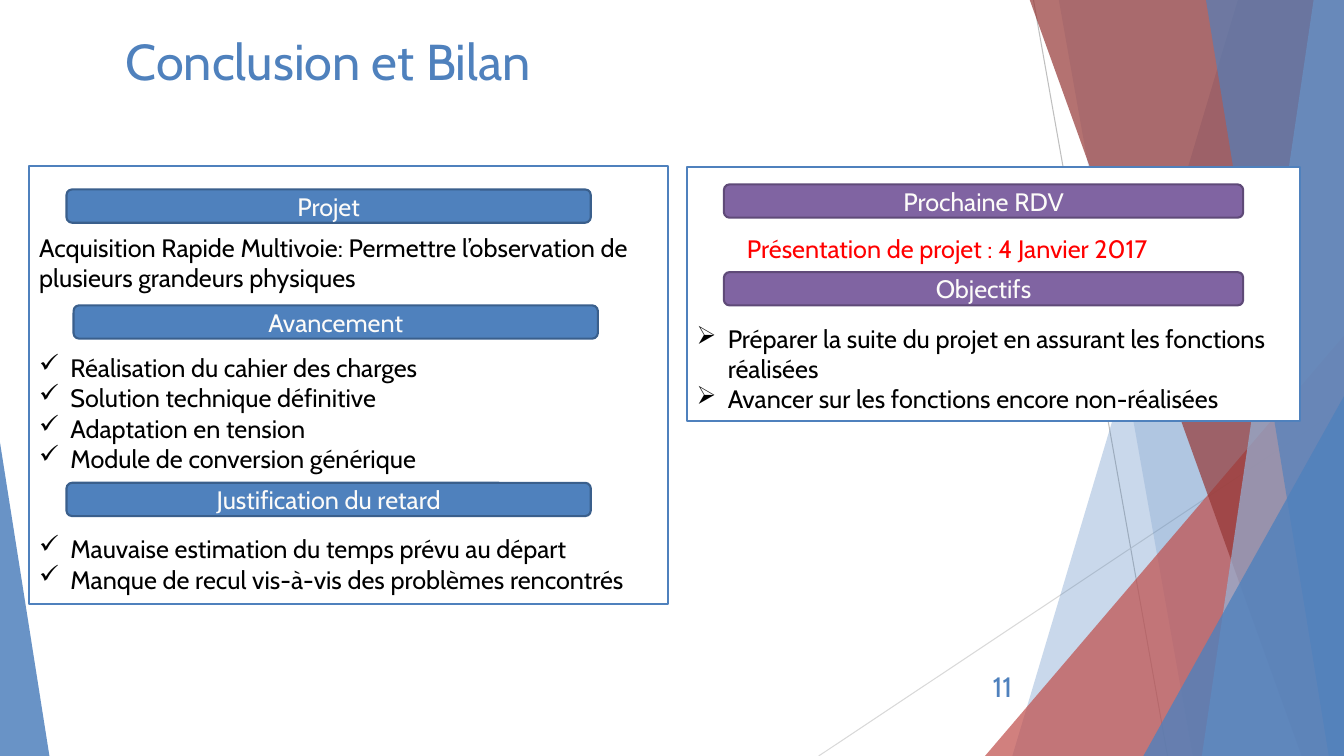
"""Build the project conclusion slide with its two summary panels."""
from dataclasses import dataclass
from typing import Any

from lxml.etree import SubElement
from pptx import Presentation
from pptx.dml.color import RGBColor
from pptx.enum.shapes import MSO_CONNECTOR, MSO_SHAPE
from pptx.enum.text import MSO_ANCHOR, PP_ALIGN
from pptx.oxml.ns import qn
from pptx.shapes.autoshape import Shape
from pptx.slide import Slide
from pptx.util import Inches, Pt

BLUE = RGBColor(0x4F, 0x81, 0xBD)
BLUE_EDGE = RGBColor(0x3A, 0x5F, 0x8C)
LIGHT_BLUE = RGBColor(0x95, 0xB3, 0xD7)
PURPLE = RGBColor(0x80, 0x64, 0xA2)
PURPLE_EDGE = RGBColor(0x5F, 0x4A, 0x78)
BRICK = RGBColor(0xC0, 0x50, 0x4D)
DARK_BRICK = RGBColor(0x95, 0x37, 0x35)
RED = RGBColor(0xFF, 0x00, 0x00)
BLACK = RGBColor(0x00, 0x00, 0x00)
WHITE = RGBColor(0xFF, 0xFF, 0xFF)
CREAM = RGBColor(0xFC, 0xFB, 0xF9)
GREY = RGBColor(0xBF, 0xBF, 0xBF)
LIGHT_GREY = RGBColor(0xD9, 0xD9, 0xD9)

WIDTH, HEIGHT = 13.33, 7.5
BAND_TOP = -0.01
HANGING = 0.31
HEADING_GAP = 43


@dataclass
class Ray:
    start: tuple[float, float]
    end: tuple[float, float]
    color: RGBColor


@dataclass
class Band:
    top_left: float
    bottom_left: float
    color: RGBColor
    opacity: int


@dataclass
class Wedge:
    left: float
    top: float
    width: float
    apex: float
    color: RGBColor
    opacity: int


@dataclass
class Item:
    text: str
    bullet: str = ""
    indent: float = 0
    color: RGBColor = BLACK
    space_before: float = 0


@dataclass
class Panel:
    left: float
    top: float
    width: float
    height: float
    items: list[Item]


@dataclass
class Heading:
    text: str
    left: float
    top: float
    width: float
    fill: RGBColor
    edge: RGBColor


@dataclass
class Label:
    text: str
    left: float
    top: float
    width: float
    height: float
    size: float
    align: PP_ALIGN
    anchor: MSO_ANCHOR


RAYS = [
    Ray((10.25, 0), (11.58, HEIGHT), GREY),
    Ray((WIDTH, 4.03), (8.12, HEIGHT), LIGHT_GREY),
]
FACETS = [
    Band(12.28, 10.04, BLUE, 30),
    Band(10.5, 11.83, BLUE, 20),
    Wedge(9.77, 3.33, 3.56, 1, BRICK, 72),
    Band(10.21, 12.91, DARK_BRICK, 70),
    Band(13.03, 11.92, LIGHT_BLUE, 70),
    Band(11.96, 13.18, BLUE, 65),
    Wedge(11.34, 3.93, 1.99, 1, BLUE, 80),
    Wedge(0, 4.39, 0.49, 0, BLUE, 85),
]
PANELS = [
    Panel(0.29, 1.65, 6.34, 4.34, [
        Item("Acquisition Rapide Multivoie: Permettre l’observation de plusieurs grandeurs physiques"),
        Item("Réalisation du cahier des charges", "✓", space_before=HEADING_GAP),
        Item("Solution technique définitive", "✓"),
        Item("Adaptation en tension", "✓"),
        Item("Module de conversion générique", "✓"),
        Item("Mauvaise estimation du temps prévu au départ", "✓", space_before=HEADING_GAP),
        Item("Manque de recul vis-à-vis des problèmes rencontrés", "✓"),
    ]),
    Panel(6.81, 1.66, 6.08, 2.52, [
        Item("Présentation de projet : 4 Janvier 2017", indent=0.5, color=RED),
        Item("Préparer la suite du projet en assurant les fonctions réalisées", "➢",
             space_before=HEADING_GAP),
        Item("Avancer sur les fonctions encore non-réalisées", "➢"),
    ]),
]
HEADINGS = [
    Heading("Projet", 0.66, 1.88, 5.2, BLUE, BLUE_EDGE),
    Heading("Avancement", 0.73, 3.03, 5.2, BLUE, BLUE_EDGE),
    Heading("Justification du retard", 0.66, 4.79, 5.2, BLUE, BLUE_EDGE),
    Heading("Prochaine RDV", 7.18, 1.83, 5.15, PURPLE, PURPLE_EDGE),
    Heading("Objectifs", 7.18, 2.7, 5.15, PURPLE, PURPLE_EDGE),
]
LABELS = [
    Label("11", 9.39, 6.61, 0.75, 0.4, 20, PP_ALIGN.RIGHT, MSO_ANCHOR.MIDDLE),
    Label("Conclusion et Bilan", 1.15, 0.25, 11.1, 1.44, 36, PP_ALIGN.LEFT, MSO_ANCHOR.TOP),
]


def apply_format(target: Any, values: dict[str, Any]) -> None:
    for name, value in values.items():
        setattr(target, name, value)


def paint(shape: Shape, fill: RGBColor, edge: RGBColor | None = None, opacity: int = 100) -> None:
    shape.shadow.inherit = False
    shape.fill.solid()
    shape.fill.fore_color.rgb = fill
    if opacity < 100:
        color = shape.fill._xPr.find(qn("a:solidFill"))[0]
        SubElement(color, qn("a:alpha"), val=str(opacity * 1000))
    if edge is None:
        shape.line.fill.background()
    else:
        shape.line.color.rgb = edge
        shape.line.width = Pt(1.5)


def write(para: Any, text: str, size: float, color: RGBColor, align: PP_ALIGN) -> None:
    para.alignment = align
    span = para.add_run()
    span.text = text
    apply_format(span.font, {"name": "Cabin", "size": Pt(size)})
    span.font.color.rgb = color


def draw_ray(page: Slide, ray: Ray) -> None:
    ends = [Inches(value) for value in ray.start + ray.end]
    line = page.shapes.add_connector(MSO_CONNECTOR.STRAIGHT, *ends)
    line.line.color.rgb = ray.color
    line.line.width = Pt(0.75)
    SubElement(line._element.spPr, qn("a:effectLst"))


def draw_facet(page: Slide, facet: Band | Wedge) -> None:
    if isinstance(facet, Band):
        outline = page.shapes.build_freeform(Inches(facet.top_left), Inches(BAND_TOP))
        corners = [(WIDTH, BAND_TOP), (WIDTH, HEIGHT), (facet.bottom_left, HEIGHT)]
        outline.add_line_segments([(Inches(x), Inches(y)) for x, y in corners], close=True)
        shape = outline.convert_to_shape()
    else:
        shape = page.shapes.add_shape(
            MSO_SHAPE.ISOSCELES_TRIANGLE, Inches(facet.left), Inches(facet.top),
            Inches(facet.width), Inches(HEIGHT - facet.top))
        shape.adjustments[0] = facet.apex
    paint(shape, facet.color, opacity=facet.opacity)


def draw_panel(page: Slide, panel: Panel) -> None:
    box = page.shapes.add_shape(MSO_SHAPE.RECTANGLE, Inches(panel.left), Inches(panel.top),
                                Inches(panel.width), Inches(panel.height))
    paint(box, WHITE, BLUE)
    frame = box.text_frame
    apply_format(frame, {"word_wrap": True, "vertical_anchor": MSO_ANCHOR.TOP,
                         "margin_top": Inches(0.65)})
    for index, item in enumerate(panel.items):
        para = frame.add_paragraph() if index else frame.paragraphs[0]
        properties = para._p.get_or_add_pPr()
        properties.set("marL", str(Inches(HANGING if item.bullet else item.indent)))
        if item.space_before:
            para.space_before = Pt(item.space_before)
        if item.bullet:
            properties.set("indent", str(Inches(-HANGING)))
            SubElement(properties, qn("a:buChar"), char=item.bullet)
        write(para, item.text, 18, item.color, PP_ALIGN.LEFT)


def draw_heading(page: Slide, heading: Heading) -> None:
    box = page.shapes.add_shape(MSO_SHAPE.ROUNDED_RECTANGLE, Inches(heading.left),
                                Inches(heading.top), Inches(heading.width), Inches(0.33))
    paint(box, heading.fill, heading.edge)
    box.text_frame.vertical_anchor = MSO_ANCHOR.MIDDLE
    write(box.text_frame.paragraphs[0], heading.text, 18, CREAM, PP_ALIGN.CENTER)


def draw_label(page: Slide, label: Label) -> None:
    box = page.shapes.add_textbox(Inches(label.left), Inches(label.top),
                                  Inches(label.width), Inches(label.height))
    apply_format(box.text_frame, {"word_wrap": True, "vertical_anchor": label.anchor})
    write(box.text_frame.paragraphs[0], label.text, label.size, BLUE, label.align)


def main() -> None:
    deck = Presentation()
    apply_format(deck, {"slide_width": Inches(WIDTH), "slide_height": Inches(HEIGHT)})
    page = deck.slides.add_slide(deck.slide_layouts[6])
    for draw, parts in ((draw_ray, RAYS), (draw_facet, FACETS), (draw_panel, PANELS),
                        (draw_heading, HEADINGS), (draw_label, LABELS)):
        for part in parts:
            draw(page, part)
    deck.save("out.pptx")


if __name__ == "__main__":
    main()
